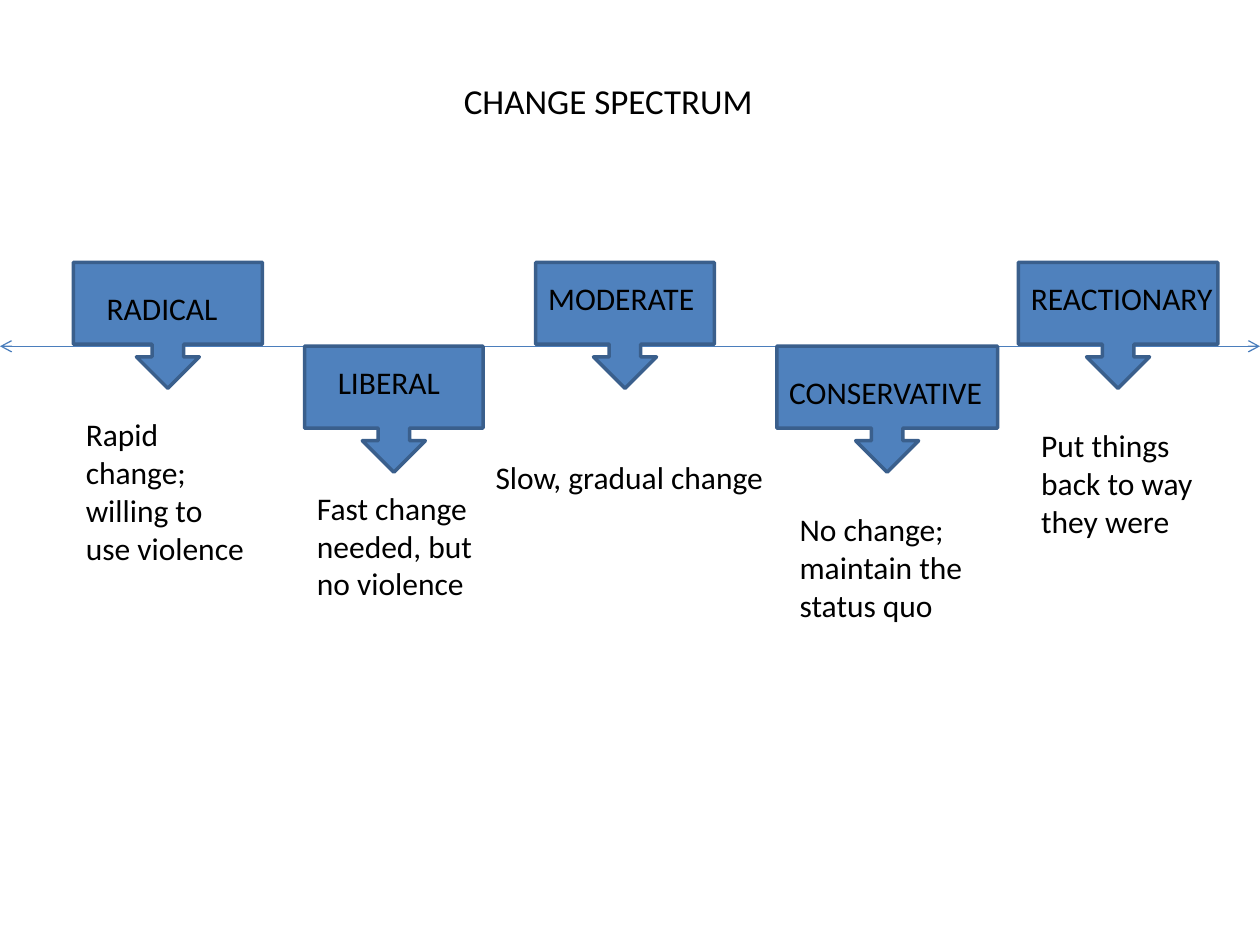
import dataclasses

import pptx
import pptx.dml.color
import pptx.enum.shapes
import pptx.enum.text
import pptx.oxml.ns
import pptx.util
from lxml import etree
from pptx.util import Cm


@dataclasses.dataclass(frozen=True)
class Theme:
    font: str = "Calibri"
    title_size: int = 20
    body_size: int = 18
    text: str = "000000"
    callout_fill: str = "4F81BD"
    callout_border: str = "3A5F8C"
    axis: str = "4B7EBC"


@dataclasses.dataclass(frozen=True)
class Position:
    """One stance; label and effect are (left, top, width) within the callout."""
    name: str
    left: float
    width: float
    label: tuple
    meaning: str
    effect: tuple
    lines: int


THEME = Theme()
SLIDE_WIDTH, SLIDE_HEIGHT = 25.4, 19.05
AXIS_TOP = 6.98
CALLOUT_HEIGHT = 2.54
ROW_TOPS = (5.29, AXIS_TOP)  # stances alternate above and below the axis

POSITIONS = (
    Position("RADICAL", 1.48, 3.81, (0.42, 0.42, 3.18),
             "Rapid change; willing to use violence", (0, 2.96, 3.81), 4),
    Position("LIBERAL", 6.14, 3.6, (0.42, 0.21, 2.96),
             "Fast change needed, but no violence", (0, 2.75, 3.81), 3),
    Position("MODERATE", 10.8, 3.6, (0, 0.21, 3.6),
             "Slow, gradual change", (-1.06, 3.81, 6.14), 1),
    Position("CONSERVATIVE", 15.66, 4.45, (0, 0.42, 4.66),
             "No change; maintain the status quo", (0.21, 3.18, 4.02), 3),
    Position("REACTIONARY", 20.53, 4.02, (0, 0.21, 4.87),
             "Put things back to way they were", (0.21, 3.18, 3.6), 3),
)


def rgb(value):
    return pptx.dml.color.RGBColor.from_string(value)


def add_text(slide, text, *, left, top, width, lines=1, size=THEME.body_size):
    height = 0.25 + lines * size * 1.2 * 2.54 / 72
    box = slide.shapes.add_textbox(Cm(left), Cm(top), Cm(width), Cm(height))
    frame = box.text_frame
    frame.word_wrap = True
    frame.auto_size = pptx.enum.text.MSO_AUTO_SIZE.SHAPE_TO_FIT_TEXT
    run = frame.paragraphs[0].add_run()
    run.text = text
    run.font.name = THEME.font
    run.font.size = pptx.util.Pt(size)
    run.font.color.rgb = rgb(THEME.text)


def add_axis(slide, left, top, width):
    axis = slide.shapes.add_connector(
        pptx.enum.shapes.MSO_CONNECTOR.STRAIGHT,
        Cm(left), Cm(top), Cm(left + width), Cm(top))
    axis.line.color.rgb = rgb(THEME.axis)
    axis.line.width = pptx.util.Pt(0.75)
    outline = axis.line._get_or_add_ln()
    for end in ("a:headEnd", "a:tailEnd"):
        etree.SubElement(outline, pptx.oxml.ns.qn(end), type="arrow")
    etree.SubElement(axis._element.spPr, pptx.oxml.ns.qn("a:effectLst"))


def add_position(slide, position, left, top, width, height):
    callout = slide.shapes.add_shape(
        pptx.enum.shapes.MSO_SHAPE.DOWN_ARROW_CALLOUT,
        Cm(left), Cm(top), Cm(width), Cm(height))
    callout.shadow.inherit = False
    callout.fill.solid()
    callout.fill.fore_color.rgb = rgb(THEME.callout_fill)
    callout.line.color.rgb = rgb(THEME.callout_border)
    callout.line.width = pptx.util.Pt(2)

    for text, (dx, dy, text_width), lines in (
            (position.name, position.label, 1),
            (position.meaning, position.effect, position.lines)):
        add_text(slide, text, left=left + dx, top=top + dy,
                 width=text_width, lines=lines)


def main():
    deck = pptx.Presentation()
    deck.slide_width, deck.slide_height = Cm(SLIDE_WIDTH), Cm(SLIDE_HEIGHT)
    slide = deck.slides.add_slide(deck.slide_layouts[6])

    add_axis(slide, 0, AXIS_TOP, SLIDE_WIDTH)
    add_text(slide, "CHANGE SPECTRUM", left=9.1, top=1.48, width=6.56,
             size=THEME.title_size)
    for index, position in enumerate(POSITIONS):
        add_position(slide, position, position.left, ROW_TOPS[index % 2],
                     position.width, CALLOUT_HEIGHT)

    deck.save("out.pptx")


if __name__ == "__main__":
    main()
